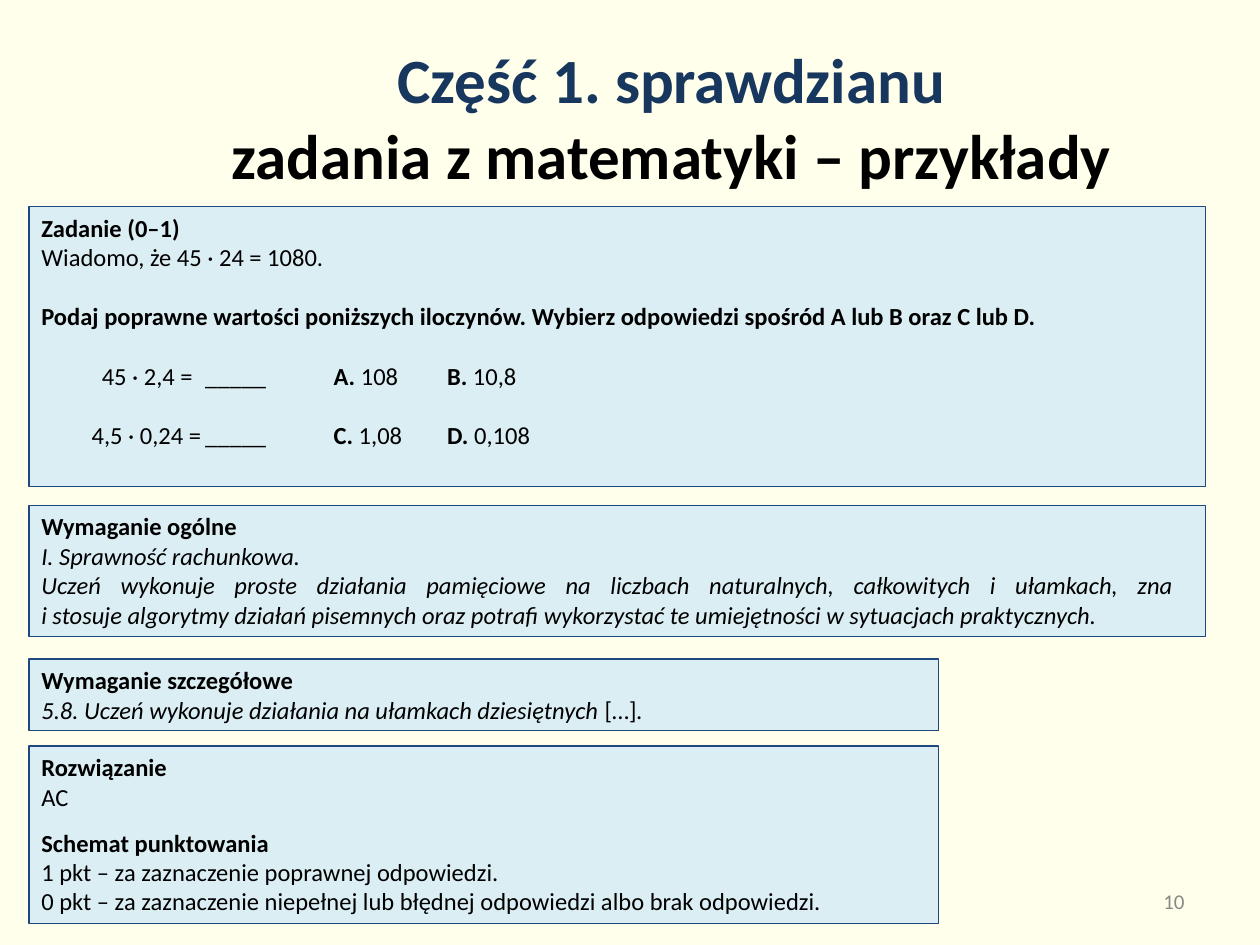
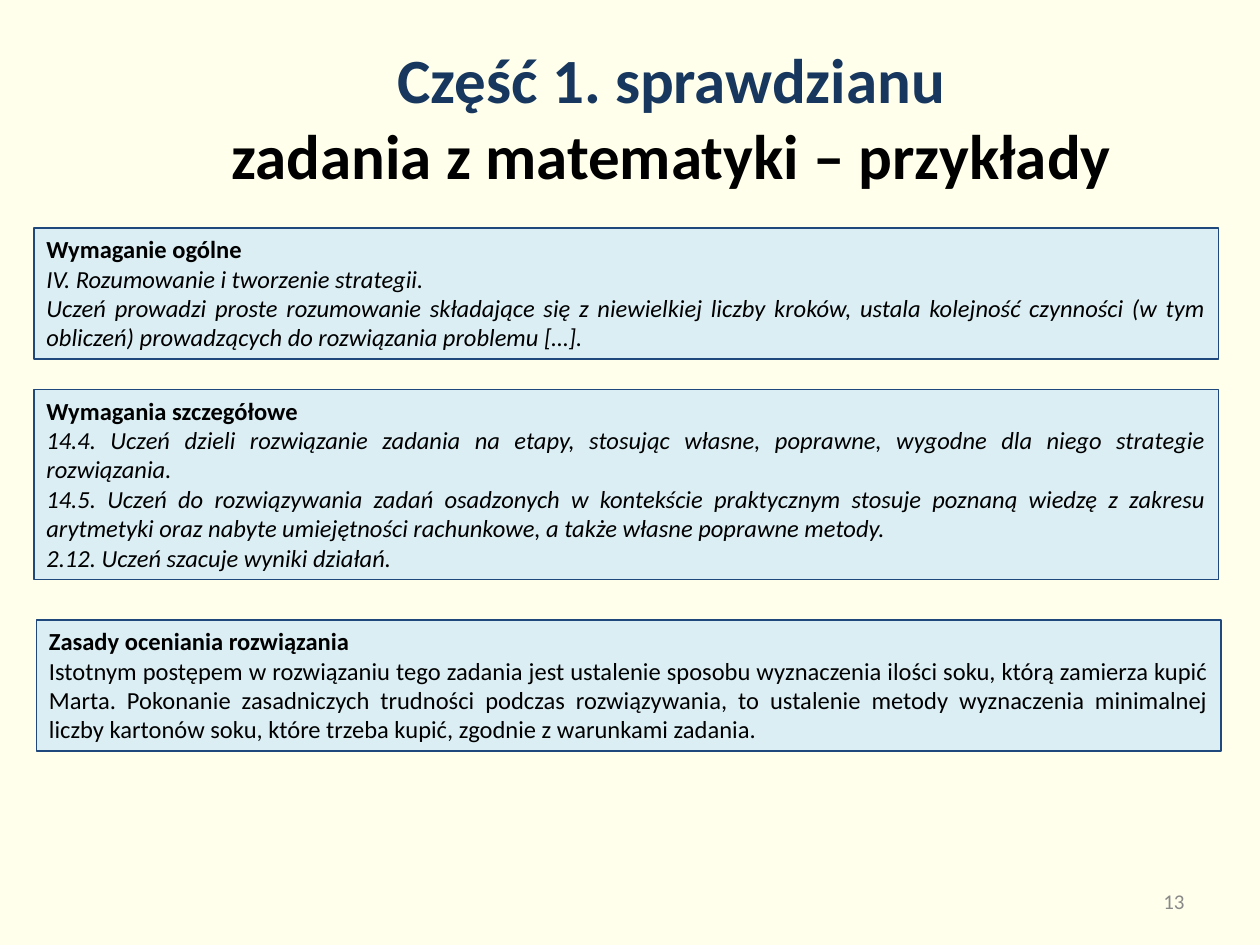
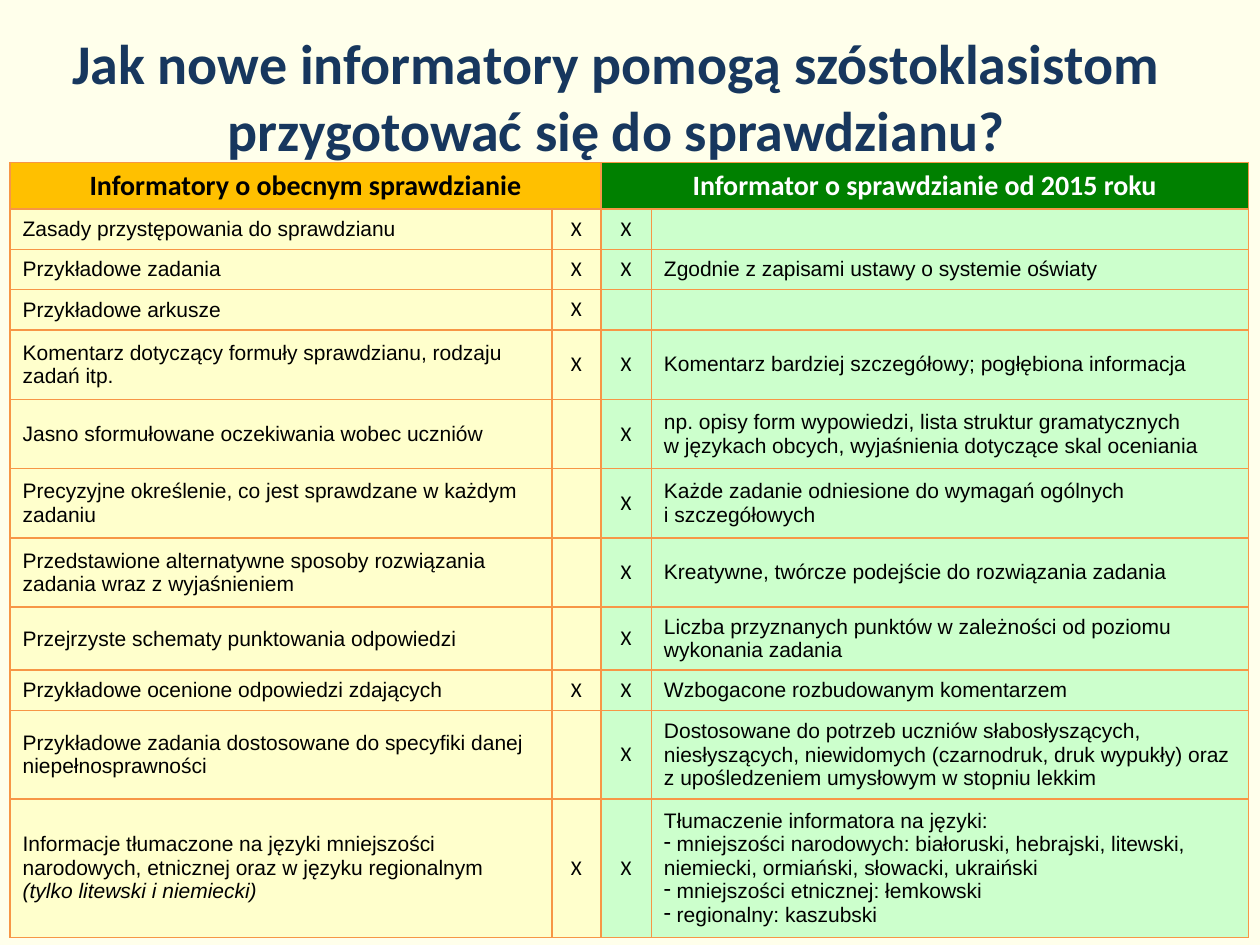
from dataclasses import dataclass

from lxml.etree import SubElement
from pptx import Presentation
from pptx.dml.color import RGBColor
from pptx.enum.shapes import MSO_SHAPE as Shape
from pptx.enum.text import MSO_ANCHOR as Anchor, PP_ALIGN as Align
from pptx.oxml.ns import qn
from pptx.util import Inches, Pt

PAPER, NAVY, BLACK, GREY = "FFFFEB", "17375E", "000000", "898989"
PANEL, PANEL_EDGE = "DBEEF4", "1F497D"
GRID, WHITE = "F79646", "FFFFFF"
OLD_HEAD, NEW_HEAD, OLD_BODY, NEW_BODY = "FFC000", "008000", "FFFFCC", "CCFFCC"
ONE_LINE, HALF_LINE = 17, 9.5
EXAM_TITLE = "Część 1. sprawdzianu\nzadania z matematyki – przykłady"
EXAM_TITLE_BOX = (1.23, 0.3, 8.2, 1.25)


@dataclass
class Line:
    """One paragraph; every second piece between bars takes the mark."""
    text: str
    mark: str = "italic"
    gap: float = 0
    tabs: tuple = ()


def heading(text, gap=0):
    """Return a wholly bold line."""
    return Line(f"|{text}|", "bold", gap)


def colour(value):
    """Turn a hex string into a colour."""
    return RGBColor.from_string(value)


def format_run(span, size, font="Calibri", ink=BLACK, bold=False, italic=False):
    """Set the font of one run."""
    span.font.name, span.font.size = font, Pt(size)
    span.font.bold, span.font.italic = bold, italic
    span.font.color.rgb = colour(ink)


def write_line(para, line, size, font="Calibri"):
    """Write a marked line into a paragraph."""
    for index, piece in enumerate(line.text.split("|")):
        marked = index % 2 == 1
        for row, text in enumerate(piece.split("\n")):
            if row:
                para.add_line_break()
            if text:
                span = para.add_run()
                span.text = text
                format_run(span, size, font, bold=marked and line.mark == "bold",
                           italic=marked and line.mark == "italic")


def add_tabs(para, stops):
    """Give a paragraph left tab stops, in inches."""
    tab_list = SubElement(para._p.get_or_add_pPr(), qn("a:tabLst"))
    for stop in stops:
        SubElement(tab_list, qn("a:tab"), pos=str(Inches(stop)), algn="l")


def add_page(deck):
    """Add a blank page with the shared background."""
    page = deck.slides.add_slide(deck.slide_layouts[6])
    page.background.fill.solid()
    page.background.fill.fore_color.rgb = colour(PAPER)
    return page


def add_label(page, box, text, size, inks, align, bold=False):
    """Add a middle-anchored text box whose lines take the inks in turn."""
    frame = page.shapes.add_textbox(*map(Inches, box)).text_frame
    frame.word_wrap, frame.vertical_anchor = True, Anchor.MIDDLE
    para = frame.paragraphs[0]
    para.text, para.alignment = text, align
    for span, ink in zip(para.runs, inks):
        format_run(span, size, ink=ink, bold=bold)


def add_panel(page, box, lines, align=Align.JUSTIFY):
    """Add a light blue panel holding the lines."""
    panel = page.shapes.add_shape(Shape.RECTANGLE, *map(Inches, box))
    panel.shadow.inherit = False
    panel.fill.solid()
    panel.fill.fore_color.rgb = colour(PANEL)
    panel.line.color.rgb, panel.line.width = colour(PANEL_EDGE), Pt(0.75)
    frame = panel.text_frame
    frame.word_wrap, frame.vertical_anchor = True, Anchor.TOP
    for index, line in enumerate(lines):
        para = frame.add_paragraph() if index else frame.paragraphs[0]
        para.alignment = align
        if line.tabs:
            add_tabs(para, line.tabs)
        if line.gap:
            para.space_before = Pt(line.gap)
        write_line(para, line, 14)


def add_exam_page(deck, number, panels):
    """Add a page of panels under the exam title."""
    page = add_page(deck)
    add_label(page, EXAM_TITLE_BOX, EXAM_TITLE, 36, (NAVY, BLACK), Align.CENTER, True)
    add_label(page, (7.17, 6.95, 2.33, 0.4), number, 12, (GREY,), Align.RIGHT)
    for panel in panels:
        add_panel(page, *panel)


def style_cell(cell, fill):
    """Give a cell its borders, fill and anchor."""
    properties = cell._tc.get_or_add_tcPr()
    for side in ("lnL", "lnR", "lnT", "lnB"):
        border = SubElement(properties, qn(f"a:{side}"), w=str(Pt(1)))
        SubElement(SubElement(border, qn("a:solidFill")), qn("a:srgbClr"), val=GRID)
    cell.fill.solid()
    cell.fill.fore_color.rgb = colour(fill)
    cell.vertical_anchor = Anchor.MIDDLE


def fill_cell(cell, lines, font, align):
    """Write table lines, turning a leading dash into a bullet."""
    for index, text in enumerate(lines):
        para = cell.text_frame.add_paragraph() if index else cell.text_frame.paragraphs[0]
        para.alignment = align
        if text.startswith("-"):
            properties = para._p.get_or_add_pPr()
            properties.set("marL", "0")
            properties.set("indent", "0")
            SubElement(properties, qn("a:buChar"), char="-")
            text = text[1:]
        write_line(para, Line(text), 12, font)
        if not text:
            SubElement(para._p, qn("a:endParaRPr"), sz="1200")


def add_comparison(page, box, widths, heads, rows):
    """Add the table comparing the old and new guides."""
    table = page.shapes.add_table(len(rows) + 1, len(widths), *map(Inches, box)).table
    table.first_row = table.horz_banding = False
    for column, width in zip(table.columns, widths):
        column.width = Inches(width)
    table.rows[0].height = Inches(0.37)
    for start, (text, fill, ink) in zip((0, 2), heads):
        cell = table.cell(0, start)
        for part in (cell, table.cell(0, start + 1)):
            style_cell(part, fill)
        cell.merge(table.cell(0, start + 1))
        para = cell.text_frame.paragraphs[0]
        para.text, para.alignment = text, Align.CENTER
        format_run(para.runs[0], 16, ink=ink, bold=True)
    for row, (height, old, old_mark, new_mark, *new) in enumerate(rows, 1):
        table.rows[row].height = Inches(height)
        for column, lines in enumerate((old.split("\n"), [old_mark], [new_mark], new)):
            cell = table.cell(row, column)
            style_cell(cell, OLD_BODY if column < 2 else NEW_BODY)
            is_mark = column in (1, 2)
            fill_cell(cell, lines, "Calibri" if is_mark else "Arial",
                      Align.CENTER if is_mark else Align.LEFT)


def build_task_page(deck):
    """Build the page with a sample task and its scoring."""
    left, wide, narrow = 0.23, 9.34, 7.22
    answer_tabs = (1.3, 2.32, 3.22)
    task = [
        heading("Zadanie (0–1)"),
        Line("Wiadomo, że 45 · 24 = 1080."),
        heading("Podaj poprawne wartości poniższych iloczynów. "
                "Wybierz odpowiedzi spośród A lub B oraz C lub D.", ONE_LINE),
        Line("\t45 · 2,4 =\t_____\t|A.| 108\t|B.| 10,8", "bold", ONE_LINE, (0.48, *answer_tabs)),
        Line("\t4,5 · 0,24 =\t_____\t|C.| 1,08\t|D.| 0,108", "bold", ONE_LINE, (0.4, *answer_tabs)),
    ]
    general = [
        heading("Wymaganie ogólne"),
        Line("|I. Sprawność rachunkowa.|"),
        Line("|Uczeń wykonuje proste działania pamięciowe na liczbach naturalnych, "
             "całkowitych i ułamkach, zna \ni stosuje algorytmy działań pisemnych oraz "
             "potrafi wykorzystać te umiejętności w sytuacjach praktycznych.|"),
    ]
    specific = [
        heading("Wymaganie szczegółowe"),
        Line("|5.8. Uczeń wykonuje działania na ułamkach dziesiętnych |[…]|.|"),
    ]
    solution = [
        heading("Rozwiązanie"),
        Line("AC"),
        heading("Schemat punktowania", HALF_LINE),
        Line("1 pkt – za zaznaczenie poprawnej odpowiedzi."),
        Line("0 pkt – za zaznaczenie niepełnej lub błędnej odpowiedzi albo brak odpowiedzi."),
    ]
    add_exam_page(deck, "10", [
        ((left, 1.64, wide, 2.22), task, Align.LEFT),
        ((left, 4.01, wide, 1.04), general),
        ((left, 5.23, narrow, 0.57), specific),
        ((left, 5.92, narrow, 1.41), solution, Align.LEFT),
    ])


def build_requirements_page(deck):
    """Build the page with requirements and assessment rules."""
    left, wide = 0.27, 9.4
    general = [
        heading("Wymaganie ogólne"),
        Line("|IV. Rozumowanie i tworzenie strategii.|"),
        Line("|Uczeń prowadzi proste rozumowanie składające się z niewielkiej liczby kroków, "
             "ustala kolejność czynności (w tym obliczeń) prowadzących do rozwiązania "
             "problemu […].|"),
    ]
    specific = [
        heading("Wymagania szczegółowe"),
        Line("|14.4. Uczeń dzieli rozwiązanie zadania na etapy, stosując własne, poprawne, "
             "wygodne dla niego strategie rozwiązania.|"),
        Line("|14.5. Uczeń do rozwiązywania zadań osadzonych w kontekście praktycznym stosuje "
             "poznaną wiedzę z zakresu arytmetyki oraz nabyte umiejętności rachunkowe, "
             "a także własne poprawne metody.|"),
        Line("|2.12. Uczeń szacuje wyniki działań.|"),
    ]
    assessment = [
        heading("Zasady oceniania rozwiązania"),
        Line("Istotnym postępem w rozwiązaniu tego zadania jest ustalenie sposobu wyznaczenia "
             "ilości soku, którą zamierza kupić Marta. Pokonanie zasadniczych trudności podczas "
             "rozwiązywania, to ustalenie metody wyznaczenia minimalnej liczby kartonów soku, "
             "które trzeba kupić, zgodnie z warunkami zadania."),
    ]
    add_exam_page(deck, "13", [
        ((left, 1.81, wide, 1.04), general),
        ((left, 3.09, wide, 1.51), specific),
        ((left + 0.02, 4.92, wide, 1.04), assessment),
    ])


def build_comparison_page(deck):
    """Build the page comparing the old and new guides."""
    page = add_page(deck)
    add_label(page, (-0.11, 0, 10, 1.52),
              "Jak nowe informatory pomogą szóstoklasistom przygotować się do sprawdzianu?",
              32, (NAVY,), Align.CENTER, True)
    heads = [
        ("Informatory o obecnym sprawdzianie", OLD_HEAD, BLACK),
        ("Informator o sprawdzianie od 2015 roku", NEW_HEAD, WHITE),
    ]
    rows = [
        (0.32, "Zasady przystępowania do sprawdzianu", "X", "X", ""),
        (0.32, "Przykładowe zadania", "X", "X", "Zgodnie z zapisami ustawy o systemie oświaty"),
        (0.32, "Przykładowe arkusze", "X", "", ""),
        (0.55, "Komentarz dotyczący formuły sprawdzianu, rodzaju zadań itp.", "X", "X",
         "Komentarz bardziej szczegółowy; pogłębiona informacja"),
        (0.55, "Jasno sformułowane oczekiwania wobec uczniów", "", "X",
         "np. opisy form wypowiedzi, lista struktur gramatycznych\n"
         "w językach obcych, wyjaśnienia dotyczące skal oceniania"),
        (0.55, "Precyzyjne określenie, co jest sprawdzane w każdym zadaniu", "", "X",
         "Każde zadanie odniesione do wymagań ogólnych\ni szczegółowych"),
        (0.55, "Przedstawione alternatywne sposoby rozwiązania zadania wraz z wyjaśnieniem",
         "", "X", "Kreatywne, twórcze podejście do rozwiązania zadania"),
        (0.48, "Przejrzyste schematy punktowania odpowiedzi", "", "X",
         "Liczba przyznanych punktów w zależności od poziomu wykonania zadania"),
        (0.32, "Przykładowe ocenione odpowiedzi zdających", "X", "X",
         "Wzbogacone rozbudowanym komentarzem"),
        (0.68, "Przykładowe zadania dostosowane do specyfiki danej niepełnosprawności", "", "X",
         "Dostosowane do potrzeb uczniów słabosłyszących, niesłyszących, niewidomych "
         "(czarnodruk, druk wypukły) oraz\nz upośledzeniem umysłowym w stopniu lekkim"),
        (1.07, "Informacje tłumaczone na języki mniejszości narodowych, etnicznej oraz "
         "w języku regionalnym\n|(tylko litewski i niemiecki)|", "X", "X",
         "Tłumaczenie informatora na języki:",
         "- mniejszości narodowych: białoruski, hebrajski, litewski, niemiecki, ormiański, "
         "słowacki, ukraiński",
         "- mniejszości etnicznej: łemkowski",
         "- regionalny: kaszubski"),
    ]
    add_comparison(page, (0.08, 1.29, 9.83, 6.08), (4.3, 0.39, 0.4, 4.74), heads, rows)


def main():
    """Build and save the deck."""
    deck = Presentation()
    deck.slide_width, deck.slide_height = Inches(10), Inches(7.5)
    build_task_page(deck)
    build_requirements_page(deck)
    build_comparison_page(deck)
    deck.save("out.pptx")


if __name__ == "__main__":
    main()
